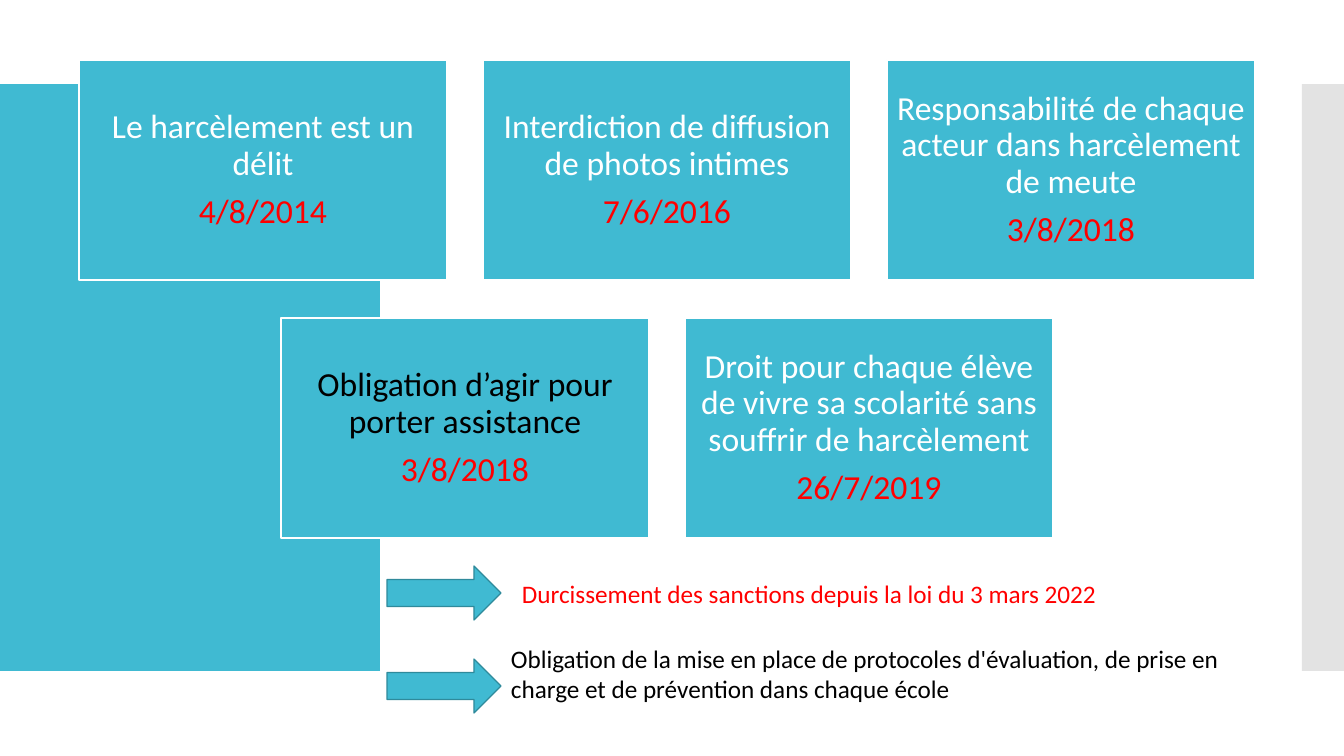
"""Build the slide on the French legal milestones against school bullying."""
from lxml.etree import SubElement
from pptx import Presentation
from pptx.dml.color import RGBColor
from pptx.enum.shapes import MSO_SHAPE
from pptx.enum.text import MSO_ANCHOR, PP_ALIGN
from pptx.oxml.ns import qn
from pptx.util import Emu, Pt

PX = 914400 / 100.8
TEAL, DARK_TEAL, GREY = "40BAD2", "2F8A9B", "C8C8C8"
WHITE, BLACK, RED = "FFFFFF", "000000", "FF0000"


def add_block(preset, box, fill, outline=None):
    block = slide.shapes.add_shape(preset, *(Emu(round(n * PX)) for n in box))
    block.shadow.inherit = False
    block.fill.solid()
    block.fill.fore_color.rgb = RGBColor.from_string(fill)
    if outline:
        block.line.color.rgb = RGBColor.from_string(outline)
        block.line.width = Pt(0.85)
    else:
        block.line.fill.background()
    return block


def write(paragraph, wording, size, color, layout):
    paragraph.text = wording
    for name, value in layout.items():
        setattr(paragraph, name, value)
    font = paragraph.runs[0].font
    for name, value in {"name": "Calibri", "size": Pt(size)}.items():
        setattr(font, name, value)
    font.color.rgb = RGBColor.from_string(color)


prs = Presentation()
prs.slide_width, prs.slide_height = Emu(round(1344 * PX)), Emu(round(756 * PX))
slide = prs.slides.add_slide(prs.slide_layouts[6])

add_block(MSO_SHAPE.RECTANGLE, (0, 84, 380, 587), TEAL)
right_band = add_block(MSO_SHAPE.RECTANGLE, (1302, 84, 42, 587), GREY)
band_color = right_band.fill._xPr.find(qn("a:solidFill"))[0]
SubElement(band_color, qn("a:alpha")).set("val", "50000")

CARD_W, CARD_H, GAP = 368, 220, 36
law_rows = [
    (79, 60, [
        ("Le harcèlement est un délit", "4/8/2014", WHITE),
        ("Interdiction de diffusion de photos intimes", "7/6/2016", WHITE),
        ("Responsabilité de chaque acteur dans harcèlement de meute", "3/8/2018", WHITE),
    ]),
    (281, 318, [
        ("Obligation d’agir pour porter assistance", "3/8/2018", BLACK),
        ("Droit pour chaque élève de vivre sa scolarité sans souffrir de harcèlement",
         "26/7/2019", WHITE),
    ]),
]
card_margins = {f"margin_{side}": Emu(round(10 * PX))
                for side in ("left", "top", "right", "bottom")}
card_format = {"word_wrap": True, "vertical_anchor": MSO_ANCHOR.MIDDLE, **card_margins}
centred = {"alignment": PP_ALIGN.CENTER, "line_spacing": 0.9}

for left, top, laws in law_rows:
    for column, (law, date, law_color) in enumerate(laws):
        box = (left + column * (CARD_W + GAP), top, CARD_W, CARD_H)
        card = add_block(MSO_SHAPE.RECTANGLE, box, TEAL, WHITE).text_frame
        for name, value in card_format.items():
            setattr(card, name, value)
        write(card.paragraphs[0], law, 24, law_color, {**centred, "space_after": Pt(8.4)})
        write(card.add_paragraph(), date, 24, RED, centred)

measures = [
    (566, (512, 573, 820, 40), RED,
     "Durcissement des sanctions depuis la loi du 3 mars 2022"),
    (659, (501, 638, 772, 102), BLACK,
     "Obligation de la mise en place de protocoles d'évaluation, "
     "de prise en charge et de prévention dans chaque école"),
]
for arrow_top, box, color, measure in measures:
    add_block(MSO_SHAPE.RIGHT_ARROW, (387, arrow_top, 114, 54), TEAL, DARK_TEAL)
    note = slide.shapes.add_textbox(*(Emu(round(n * PX)) for n in box)).text_frame
    note.word_wrap = True
    write(note.paragraphs[0], measure, 18, color, {"alignment": PP_ALIGN.LEFT})

prs.save("out.pptx")
